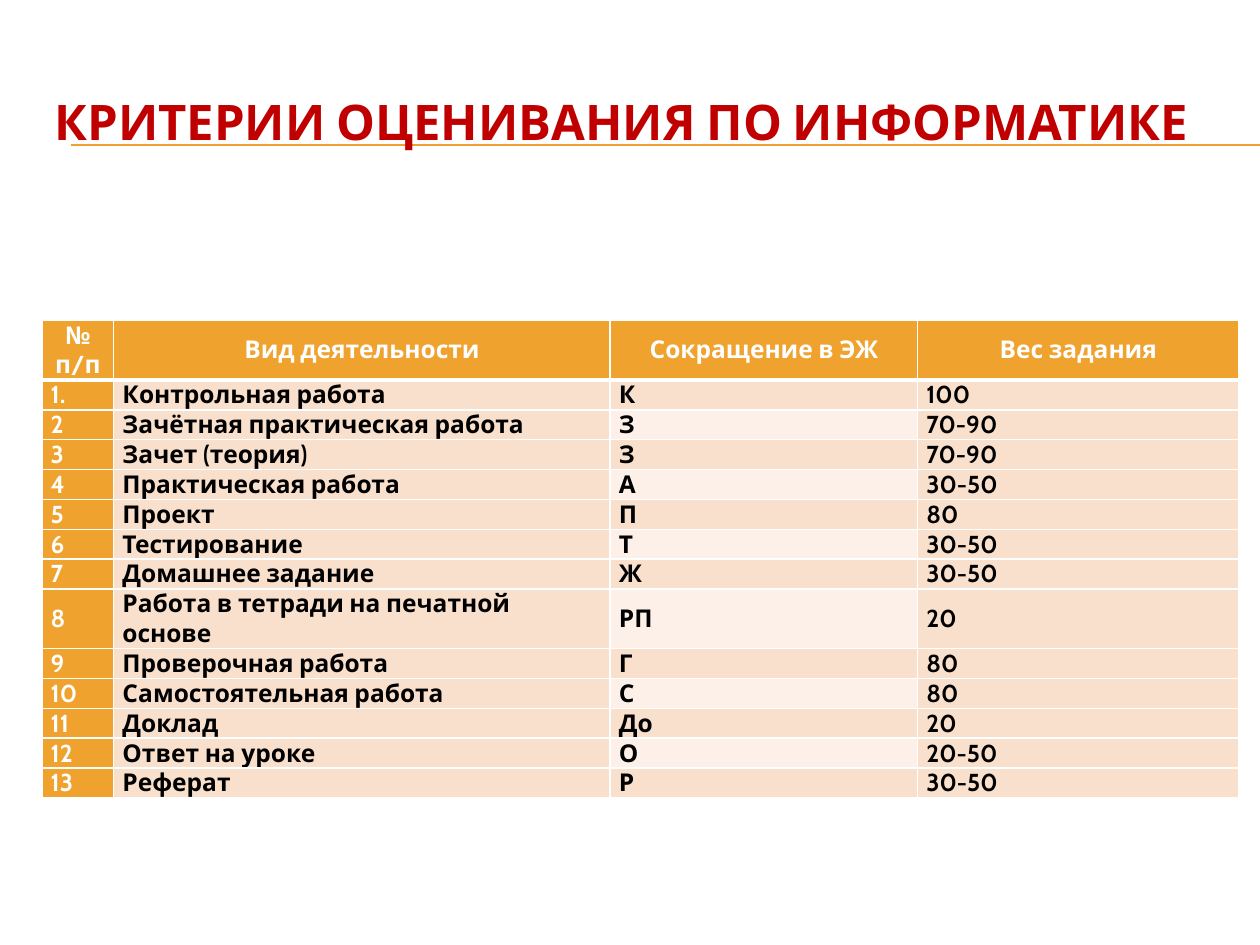
from lxml.etree import SubElement
from pptx import Presentation
from pptx.dml.color import RGBColor
from pptx.enum.shapes import MSO_CONNECTOR as Connector
from pptx.enum.text import MSO_ANCHOR as Anchor, MSO_AUTO_SIZE as AutoSize, PP_ALIGN as Align
from pptx.oxml.ns import qn
from pptx.util import Pt

FONT = "Cabin"
COLORS = {
    "title": "C00000",
    "accent": "F0A22E",
    "band": "F9E0CD",
    "light": "FCF0E8",
    "white": "FFFFFF",
    "text": "000000",
}
HEADER = ["№ п/п", "Вид деятельности", "Сокращение в ЭЖ", "Вес задания"]
CRITERIA = [
    ("Контрольная работа", "К", "100"),
    ("Зачётная практическая работа", "З", "70-90"),
    ("Зачет (теория)", "З", "70-90"),
    ("Практическая работа", "А", "30-50"),
    ("Проект", "П", "80"),
    ("Тестирование", "Т", "30-50"),
    ("Домашнее задание", "Ж", "30-50"),
    ("Работа в тетради на печатной основе", "РП", "20"),
    ("Проверочная работа", "Г", "80"),
    ("Самостоятельная работа", "С", "80"),
    ("Доклад", "До", "20"),
    ("Ответ на уроке", "О", "20-50"),
    ("Реферат", "Р", "30-50"),
]
COLUMN_WIDTHS = [41, 283.7, 175.7, 183.6]
ROW_HEIGHT = 14.4


def color(name):
    return RGBColor.from_string(COLORS[name])


def format_text(para, size, color_name, align):
    para.alignment = align
    for span in para.runs:
        span.font.name = FONT
        span.font.size = Pt(size)
        span.font.bold = True
        span.font.color.rgb = color(color_name)


def place_title(page, box, text):
    title = page.shapes.title
    title.left, title.top, title.width, title.height = map(Pt, box)
    frame = title.text_frame
    frame.text = text
    frame.word_wrap = True
    frame.auto_size = AutoSize.NONE
    frame.vertical_anchor = Anchor.MIDDLE
    format_text(frame.paragraphs[0], 28, "title", Align.LEFT)


def place_rules(page, box):
    """Two thin rules, at the top and bottom of the box, behind the title."""
    left, top, width, height = box
    for y in (top, top + height):
        rule = page.shapes.add_connector(
            Connector.STRAIGHT, Pt(left), Pt(y), Pt(left + width), Pt(y))
        rule.line.color.rgb = color("accent")
        rule.line.width = Pt(0.75)
        SubElement(rule.element.spPr, qn("a:effectLst"))
        page.shapes.title.element.addprevious(rule.element)


def set_borders(cell, row):
    widths = {"L": 1, "R": 1, "T": 3 if row == 1 else 1, "B": 3 if row == 0 else 1}
    properties = cell._tc.get_or_add_tcPr()
    for side, width in widths.items():
        border = SubElement(properties, qn(f"a:ln{side}"), w=str(Pt(width)))
        fill = SubElement(border, qn("a:solidFill"))
        SubElement(fill, qn("a:srgbClr"), val=COLORS["white"])


def fill_name(row, column):
    if row == 0 or column == 0:
        return "accent"
    return "light" if column == 2 and row % 2 == 0 else "band"


def place_table(page, box):
    numbers = ["1."] + [str(n) for n in range(2, len(CRITERIA) + 1)]
    rows = [HEADER] + [[n, *item] for n, item in zip(numbers, CRITERIA)]
    table = page.shapes.add_table(len(rows), len(HEADER), *map(Pt, box)).table
    for column, width in zip(table.columns, COLUMN_WIDTHS):
        column.width = Pt(width)
    for r, values in enumerate(rows):
        table.rows[r].height = Pt(ROW_HEIGHT)
        for c, value in enumerate(values):
            cell = table.cell(r, c)
            cell.text = value
            cell.vertical_anchor = Anchor.MIDDLE
            cell.margin_left = cell.margin_right = Pt(5)
            cell.margin_top = cell.margin_bottom = Pt(0)
            set_borders(cell, r)
            cell.fill.solid()
            cell.fill.fore_color.rgb = color(fill_name(r, c))
            format_text(cell.text_frame.paragraphs[0], 14,
                        "white" if r == 0 or c == 0 else "text",
                        Align.CENTER if r == 0 else Align.LEFT)


def main():
    deck = Presentation()
    deck.slide_width, deck.slide_height = Pt(720), Pt(540)
    page = deck.slides.add_slide(deck.slide_layouts[5])
    page.background.fill.solid()
    page.background.fill.fore_color.rgb = color("white")

    # Heading with its rules
    place_title(page, (24, 36, 684, 66), "КРИТЕРИИ ОЦЕНИВАНИЯ ПО ИНФОРМАТИКЕ")
    place_rules(page, (40.5, 82.8, 679.5, 0.5))

    # Grading criteria
    place_table(page, (24, 183, sum(COLUMN_WIDTHS), ROW_HEIGHT * (len(CRITERIA) + 1)))
    deck.save("out.pptx")


if __name__ == "__main__":
    main()
